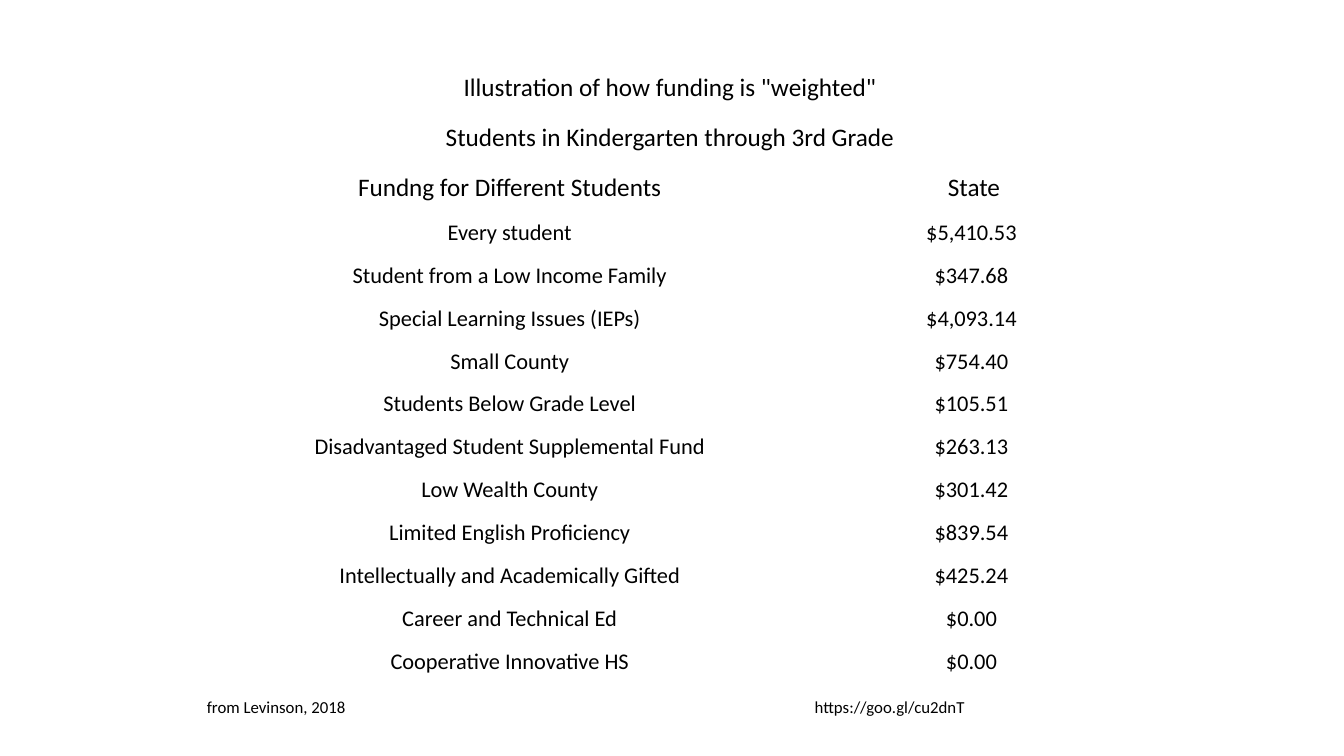
from pptx import Presentation
from pptx.dml.color import RGBColor
from pptx.enum.text import MSO_ANCHOR as Anchor, PP_ALIGN as Align
from pptx.util import Pt

BLACK = RGBColor(0, 0, 0)
FONT = "Calibri"
BLANK_LAYOUT = 6

TITLES = ['Illustration of how funding is "weighted"',
          "Students in Kindergarten through 3rd Grade"]
HEADINGS = ("Fundng for Different Students", "State")
FUNDING = [
    ("Every student", "$5,410.53 "),
    ("Student from a Low Income Family", "$347.68 "),
    ("Special Learning Issues (IEPs)", "$4,093.14 "),
    ("Small County", "$754.40 "),
    ("Students Below Grade Level", "$105.51 "),
    ("Disadvantaged Student Supplemental Fund", "$263.13 "),
    ("Low Wealth County", "$301.42 "),
    ("Limited English Proficiency", "$839.54 "),
    ("Intellectually and Academically Gifted", "$425.24 "),
    ("Career and Technical Ed", "$0.00 "),
    ("Cooperative Innovative HS", "$0.00 "),
]
SOURCE = ("from Levinson, 2018", "https://goo.gl/cu2dnT")

LEFT, TOP = 147, 38.2
COLUMN_WIDTHS = (434.2, 229)
HEADER_HEIGHT, BODY_HEIGHT = 35.72, 30.67
HEADER_SIZE, BODY_SIZE, SOURCE_SIZE = 18, 16, 12


def add_plain_table(slide, row_heights):
    """Add a table without header or banded styling."""
    frame = slide.shapes.add_table(
        len(row_heights), len(COLUMN_WIDTHS), Pt(LEFT), Pt(TOP),
        Pt(sum(COLUMN_WIDTHS)), Pt(sum(row_heights)))
    table = frame.table
    table.first_row = table.horz_banding = False
    for column, width in zip(table.columns, COLUMN_WIDTHS):
        column.width = Pt(width)
    for row, height in zip(table.rows, row_heights):
        row.height = Pt(height)
    return table


def fill_cell(cell, text, size, align):
    cell.fill.background()
    cell.vertical_anchor = Anchor.BOTTOM
    cell.margin_left = cell.margin_right = cell.margin_top = Pt(0.75)
    cell.margin_bottom = Pt(0)
    paragraph = cell.text_frame.paragraphs[0]
    paragraph.alignment = align
    run = paragraph.add_run()
    run.text = text
    run.font.name = FONT
    run.font.size = Pt(size)
    run.font.color.rgb = BLACK


def main():
    prs = Presentation()
    prs.slide_width, prs.slide_height = Pt(960), Pt(540)
    slide = prs.slides.add_slide(prs.slide_layouts[BLANK_LAYOUT])

    rows = [((title,), HEADER_SIZE, Align.CENTER) for title in TITLES]
    rows.append((HEADINGS, HEADER_SIZE, Align.CENTER))
    rows += [(entry, BODY_SIZE, Align.CENTER) for entry in FUNDING]
    rows.append((SOURCE, SOURCE_SIZE, Align.LEFT))

    heights = [HEADER_HEIGHT if size == HEADER_SIZE else BODY_HEIGHT
               for _, size, _ in rows]
    table = add_plain_table(slide, heights)
    for index, (texts, size, align) in enumerate(rows):
        if len(texts) == 1:
            table.cell(index, 0).merge(table.cell(index, 1))
        for column, text in enumerate(texts):
            fill_cell(table.cell(index, column), text, size, align)

    prs.save("out.pptx")


if __name__ == "__main__":
    main()
